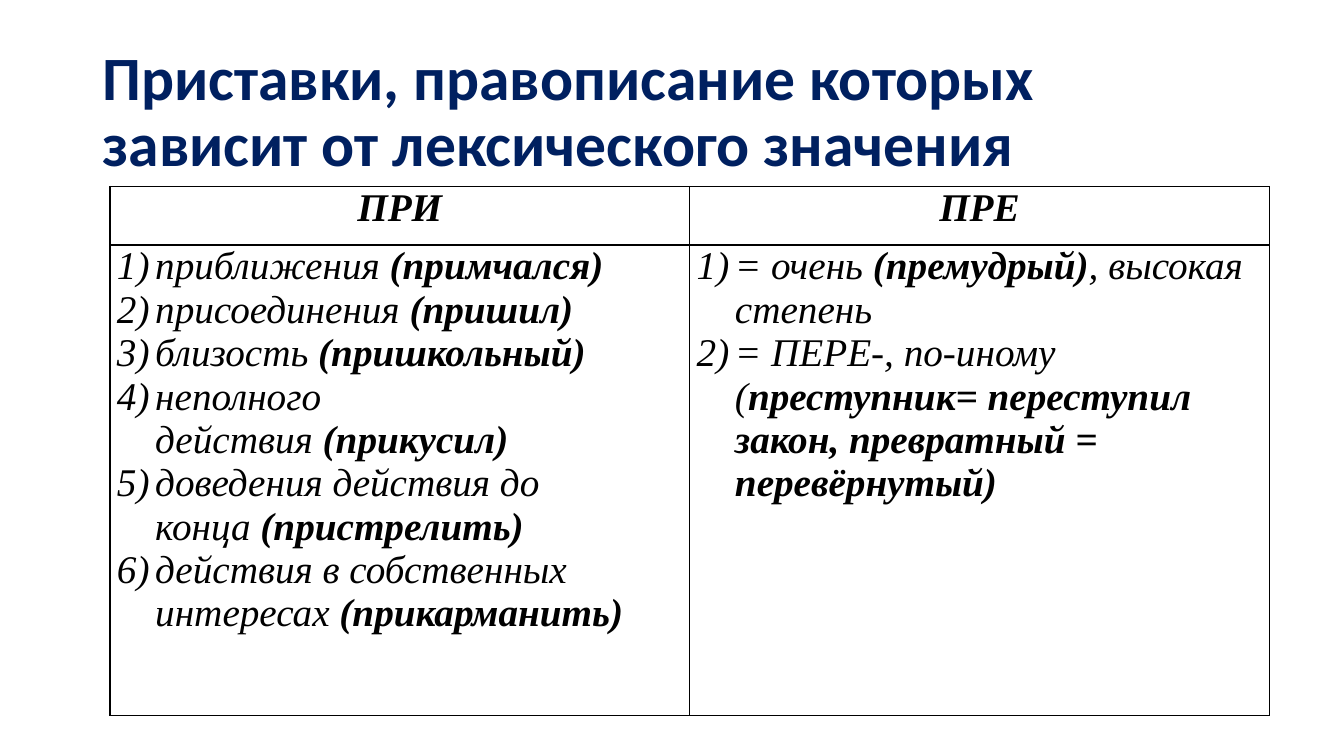
import pptx
import pptx.util
import pptx.dml.color
import pptx.enum.text
import pptx.oxml.ns
from dataclasses import dataclass
from lxml import etree

# Content: *bold*, ~ is a non-breaking space
TITLE = "Приставки, правописание которых зависит от лексического значения"
HEADS = ["ПРИ", "ПРЕ"]
LISTS = [
    [
        "приближения~*(примчался)*",
        "присоединения~*(пришил)*",
        "близость~*(пришкольный)*",
        "неполного действия~*(прикусил)*",
        "доведения действия до конца~*(пристрелить)*",
        "действия в собственных интересах* (прикарманить)*",
    ],
    [
        "= очень~*(премудрый)*, высокая степень",
        "= ПЕРЕ-, по-иному (*преступник= переступил закон, превратный = перевёрнутый)*",
    ],
]


@dataclass
class Theme:
    navy: str = "002060"
    black: str = "000000"
    head: str = "Calibri"
    body: str = "Times New Roman"
    big: int = 44
    mid: int = 28
    line: int = 1


LOOK = Theme()
Inch = pptx.util.Inches
Pt = pptx.util.Pt
Align = pptx.enum.text.PP_ALIGN
Anchor = pptx.enum.text.MSO_ANCHOR

# Grid in inches
WIDE, HIGH = 13.33, 7.5
LEFT, TOP = 1.09, 1.85
COL = 5.75
ROWS = [0.58, 4.67]
PAD, HANG = 0.07, 0.38


def style(font, name, size, color, bold, italic=False):
    font.name, font.size = name, Pt(size)
    font.bold, font.italic = bold, italic
    font.color.rgb = pptx.dml.color.RGBColor.from_string(color)


def node(parent, tag, **attrs):
    return etree.SubElement(parent, pptx.oxml.ns.qn("a:" + tag), attrs)


def frame(cell):
    """Clear fill, tight margins and a thin border on all sides."""
    cell.margin_left = cell.margin_right = Inch(PAD)
    cell.margin_top = cell.margin_bottom = 0
    cell.fill.background()
    props = cell._tc.get_or_add_tcPr()
    for spot, side in enumerate("LRTB"):
        edge = node(props, "ln" + side, w=str(Pt(LOOK.line)))
        node(node(edge, "solidFill"), "srgbClr", val=LOOK.black)
        props.insert(spot, edge)


def item(par, text):
    """Write one numbered line with mixed weights."""
    props = par._p.get_or_add_pPr()
    props.set("marL", str(Inch(HANG)))
    props.set("indent", str(-Inch(HANG)))
    node(props, "buFont", typeface=LOOK.body)
    node(props, "buAutoNum", type="arabicParenR")
    for spot, part in enumerate(text.replace("~", chr(160)).split("*")):
        if part:
            run = par.add_run()
            run.text = part
            style(run.font, LOOK.body, LOOK.mid, LOOK.black, spot % 2 == 1, True)


def main():
    deck = pptx.Presentation()
    deck.slide_width, deck.slide_height = Inch(WIDE), Inch(HIGH)
    slide = deck.slides.add_slide(deck.slide_layouts[6])

    # Title
    box = slide.shapes.add_textbox(Inch(0.92), Inch(0.4), Inch(11.5), Inch(1.45))
    box.text_frame.word_wrap = True
    box.text_frame.vertical_anchor = Anchor.MIDDLE
    par = box.text_frame.paragraphs[0]
    par.text = TITLE
    par.line_spacing = 0.9
    style(par.font, LOOK.head, LOOK.big, LOOK.navy, True)

    # Table
    table = slide.shapes.add_table(
        len(ROWS), len(HEADS), Inch(LEFT), Inch(TOP),
        Inch(COL * len(HEADS)), Inch(sum(ROWS))).table
    table.first_row = table.horz_banding = False
    for row, high in zip(table.rows, ROWS):
        row.height = Inch(high)
    for cell in table.iter_cells():
        frame(cell)

    for col, (head, lines) in enumerate(zip(HEADS, LISTS)):
        table.columns[col].width = Inch(COL)
        par = table.cell(0, col).text_frame.paragraphs[0]
        par.text = head
        par.alignment = Align.CENTER
        style(par.font, LOOK.body, LOOK.mid, LOOK.black, True, True)
        text = table.cell(1, col).text_frame
        for spot, line in enumerate(lines):
            item(text.add_paragraph() if spot else text.paragraphs[0], line)

    deck.save("out.pptx")


if __name__ == "__main__":
    main()
